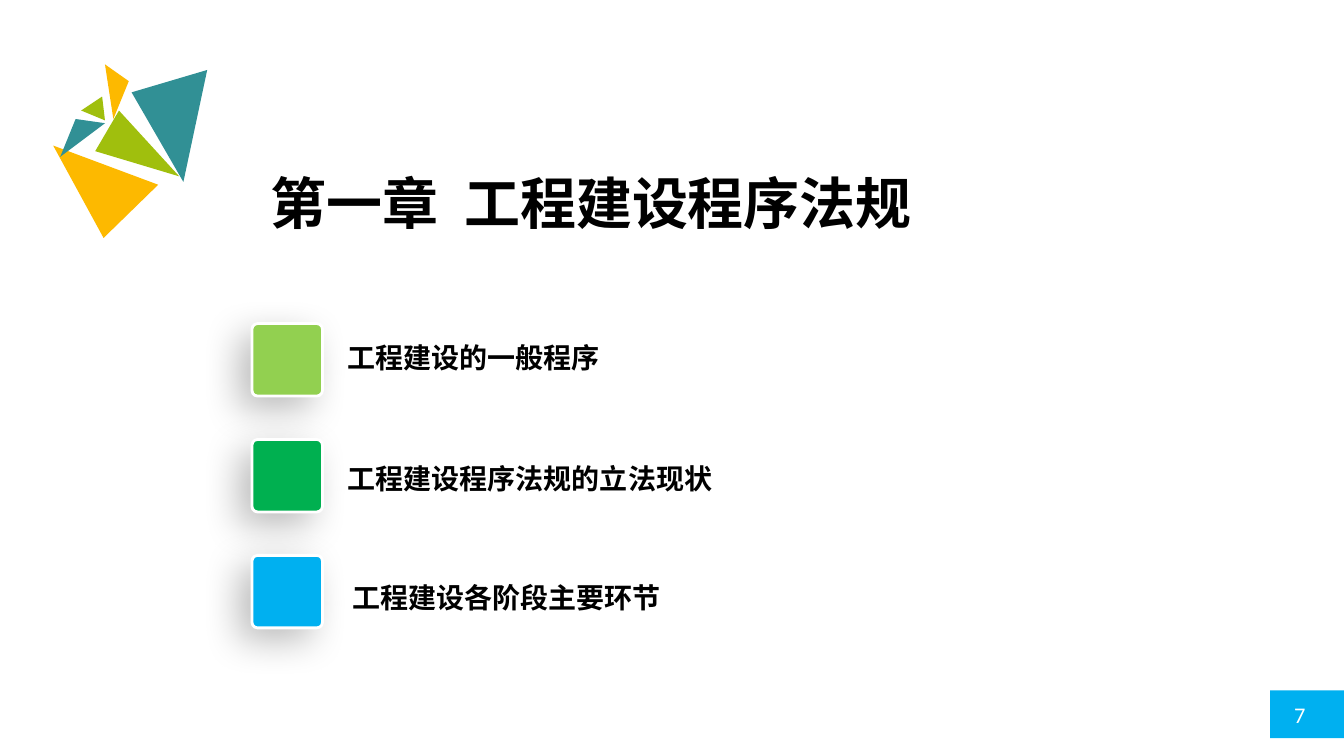
"""Build the chapter contents slide with its triangle ornament and three topics."""
from lxml import etree
from pptx import Presentation
from pptx.dml.color import RGBColor
from pptx.enum.shapes import MSO_SHAPE
from pptx.enum.text import MSO_ANCHOR
from pptx.oxml.ns import qn
from pptx.util import Pt

RECTANGLE, ROUNDED = MSO_SHAPE.RECTANGLE, MSO_SHAPE.ROUNDED_RECTANGLE
MIDDLE = MSO_ANCHOR.MIDDLE

THEME = {
    "teal": "319095", "olive": "A0BF0D", "amber": "FDB900",
    "lime": "92D050", "green": "00B050", "sky": "00B0F0",
    "white": "FFFFFF", "black": "000000",
    "cjk": "Noto Sans CJK SC", "latin": "Calibri",
    "title": 40, "topic": 20, "number": 16,
}

TITLE = "第一章  工程建设程序法规"
PAGE_NUMBER = "7"
TOPICS = [
    ("工程建设的一般程序", "lime", 241.2, 255.3),
    ("工程建设程序法规的立法现状", "green", 241.2, 341.8),
    ("工程建设各阶段主要环节", "sky", 244.4, 426.8),
]
TRIANGLES = [
    ("teal", [(148.5, 50), (131.4, 129.5), (93.6, 65.8)]),
    ("olive", [(68, 108.2), (85, 79), (127.8, 125.5)]),
    ("amber", [(37.7, 104.1), (113, 131.5), (73.5, 170.5)]),
    ("teal", [(53.8, 85.3), (75.2, 88.1), (43.4, 111.5)]),
    ("olive", [(58, 79), (73, 68.6), (75.2, 85.8)]),
    ("amber", [(75, 46), (91.5, 58), (80.8, 85)]),
]
TILE_LEFT, TILE_TOP, TILE_WIDTH, TILE_HEIGHT, TILE_STEP = 180, 231.1, 50.4, 51.8, 82.8
TOPIC_WIDTH, TOPIC_HEIGHT = 480, 50


def color(key):
    return RGBColor.from_string(THEME[key])


def paint(shape, fill):
    shape.shadow.inherit = False
    shape.fill.solid()
    shape.fill.fore_color.rgb = color(fill)
    shape.line.fill.background()


def add_shape(slide, kind, box, fill):
    shape = slide.shapes.add_shape(kind, *map(Pt, box))
    paint(shape, fill)
    return shape


def add_triangle(slide, fill, corners):
    builder = slide.shapes.build_freeform(*corners[0], scale=Pt(1))
    builder.add_line_segments(corners[1:], close=True)
    paint(builder.convert_to_shape(), fill)


def add_text(slide, text, box, size, face, ink, bold):
    frame = slide.shapes.add_textbox(*map(Pt, box)).text_frame
    frame.word_wrap = True
    frame.vertical_anchor = MIDDLE
    run = frame.paragraphs[0].add_run()
    run.text = text
    formats = {"size": Pt(THEME[size]), "name": THEME[face], "bold": bold}
    for attribute, value in formats.items():
        setattr(run.font, attribute, value)
    run.font.color.rgb = color(ink)
    east_asian = etree.SubElement(run.font._element, qn("a:ea"))
    east_asian.set("typeface", THEME[face])


def add_tile(slide, row, fill):
    top = TILE_TOP + row * TILE_STEP
    tile = add_shape(slide, ROUNDED, (TILE_LEFT, top, TILE_WIDTH, TILE_HEIGHT), fill)
    tile.adjustments[0] = 0.08
    tile.line.color.rgb = color("white")
    tile.line.width = Pt(2)
    effects = tile._element.spPr.find(qn("a:effectLst"))
    shadow = etree.SubElement(effects, qn("a:outerShdw"), blurRad=str(Pt(27)),
                              dist=str(Pt(12)), dir="8100000", algn="tr", rotWithShape="0")
    shade = etree.SubElement(shadow, qn("a:srgbClr"), val=THEME["black"])
    etree.SubElement(shade, qn("a:alpha"), val="26000")


def main():
    deck = Presentation()
    deck.slide_width, deck.slide_height = Pt(960), Pt(540)
    slide = deck.slides.add_slide(deck.slide_layouts[6])

    add_shape(slide, RECTANGLE, (907.2, 493.2, 52.8, 34), "sky")
    add_text(slide, PAGE_NUMBER, (917.3, 497, 33, 27), "number", "latin", "white", False)
    for fill, corners in TRIANGLES:
        add_triangle(slide, fill, corners)
    add_text(slide, TITLE, (186.5, 110, 672.5, 69), "title", "cjk", "black", True)
    for row, (topic, fill, left, center) in enumerate(TOPICS):
        add_tile(slide, row, fill)
        box = (left, center - TOPIC_HEIGHT / 2, TOPIC_WIDTH, TOPIC_HEIGHT)
        add_text(slide, topic, box, "topic", "cjk", "black", True)
    deck.save("out.pptx")


if __name__ == "__main__":
    main()
